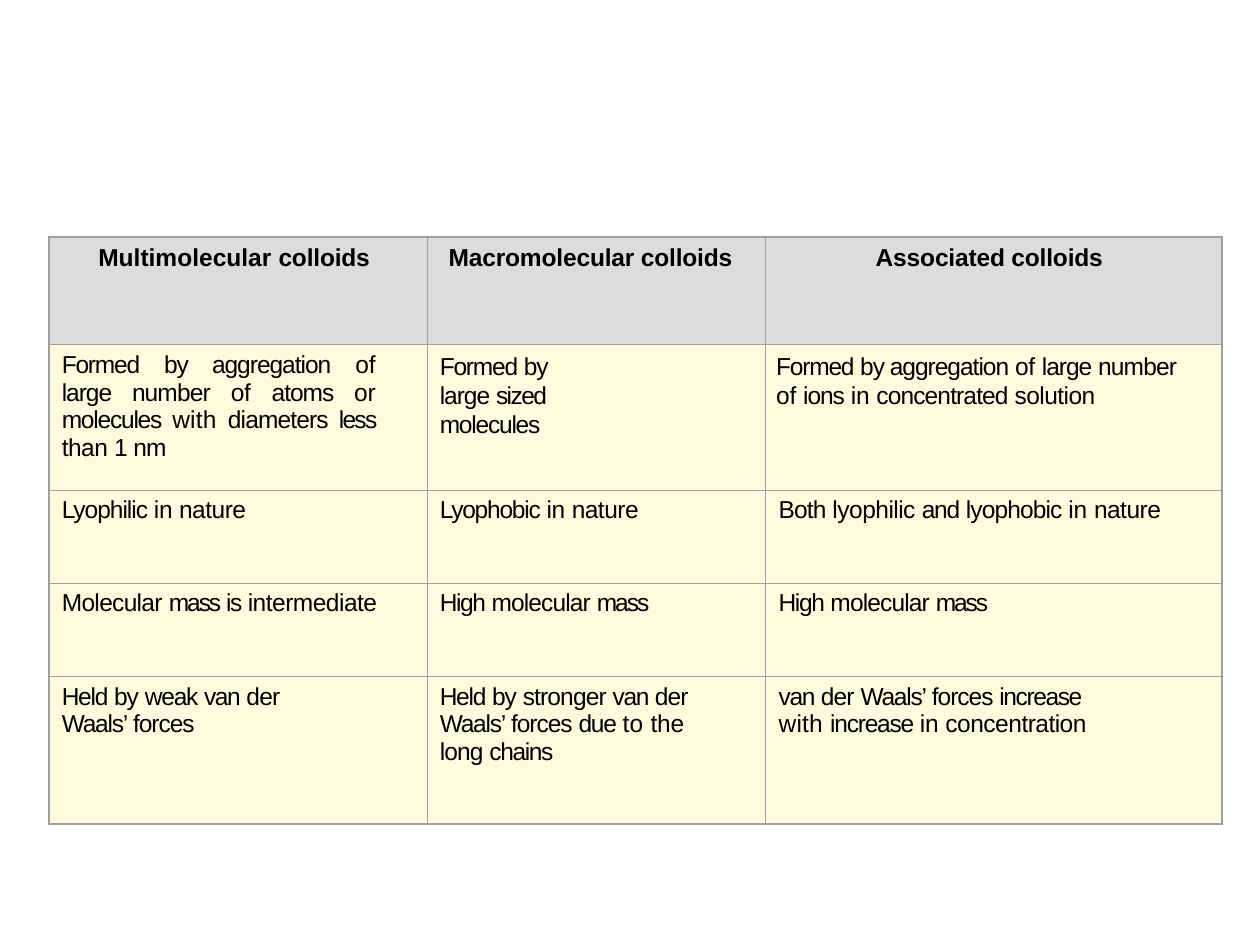
"""Build a slide with a table that compares three kinds of colloids."""
from typing import NamedTuple

from lxml import etree
from pptx import Presentation
from pptx.dml.color import RGBColor
from pptx.enum.text import MSO_ANCHOR, PP_ALIGN
from pptx.oxml.ns import qn
from pptx.util import Inches, Pt

LEFT, JUST = PP_ALIGN.LEFT, PP_ALIGN.JUSTIFY
TOP = MSO_ANCHOR.TOP
FONT, SIZE = "Arial", 14
INK, EDGE, HEAD, BODY = "000000", "9F9F9F", "DCDCDC", "FFFADE"
THIN, THICK = 0.25, 1
COLS = (3, 2.68, 3.63)


class Row(NamedTuple):
    high: float
    inset: float
    fill: str
    bold: bool


class Entry(NamedTuple):
    runs: tuple
    indent: float = 0.1
    right: float = 0
    before: float = 3.7
    line: float = 0
    align: PP_ALIGN = LEFT


ROWS = (
    Row(0.85, 0.06, HEAD, True),
    Row(1.16, 0.06, BODY, False),
    Row(0.74, 0.05, BODY, False),
    Row(0.74, 0.05, BODY, False),
    Row(1.17, 0.05, BODY, False),
)
HIGH = (("High ", -0.8), ("molecular ", -0.5), ("mass", -1.2))
GRID = (
    (
        Entry((("Multimolecular ", 0), ("colloids", -0.1)), 0.39, before=4.4),
        Entry((("Macromolecular colloids", -0.1),), 0.17, before=4.4),
        Entry((("Associated colloids", -0.1),), 0.88, before=4.4),
    ),
    (
        Entry((("Formed ", -0.7), ("by aggregation ", -0.6), ("of ", -0.1),
               ("large ", -0.6), ("number ", -0.5), ("of ", -0.1),
               ("atoms ", -0.6), ("or ", -0.1), ("molecules ", -0.7),
               ("with ", 0.1), ("diameters ", -0.5), ("less ", -1),
               ("than ", -0.3), ("1 ", -0.7), ("nm", -0.6)),
              right=0.41, before=4, align=JUST),
        Entry((("Formed ", -0.7), ("by large ", -0.6), ("sized ", -0.9),
               ("molecules", -0.7)), right=1.5, before=4.1, line=16.7),
        Entry((("Formed ", -0.7), ("by aggregation ", -0.6), ("of ", -0.1),
               ("large ", -0.6), ("number ", -0.5), ("of ", -0.1),
               ("ions ", -0.6), ("in ", -0.1), ("concentrated ", -0.5),
               ("solution", -0.3)), 0.09, 0.27, 4.6, 16.7),
    ),
    (
        Entry((("Lyophilic ", -0.6), ("in ", -0.2), ("nature", -0.3))),
        Entry((("Lyophobic ", -0.7), ("in ", -0.2), ("nature", -0.3))),
        Entry((("Both ", -0.5), ("lyophilic ", -0.3), ("and ", -0.7),
               ("lyophobic ", -0.5), ("in ", -0.1), ("nature", -0.3)), 0.11),
    ),
    (
        Entry((("Molecular ", -0.4), ("mass ", -1.2), ("is ", -0.8),
               ("intermediate", -0.3))),
        Entry(HIGH),
        Entry(HIGH, 0.11),
    ),
    (
        Entry((("Held ", -0.7), ("by ", -0.6), ("weak ", -0.7),
               ("van ", -0.8), ("der ", -0.4), ("Waals’ ", -0.7),
               ("forces", -0.6)), right=0.9),
        Entry((("Held ", -0.7), ("by ", -0.6), ("stronger ", -0.5),
               ("van ", -0.8), ("der ", -0.5), ("Waals’ ", -0.7),
               ("forces ", -0.6), ("due ", -0.7), ("to ", 0.1),
               ("the ", -0.1), ("long ", -0.5), ("chains", -0.8)),
              right=0.45),
        Entry((("van ", -0.8), ("der ", -0.5), ("Waals’ ", -0.7),
               ("forces ", -0.6), ("increase ", -0.8), ("with ", 0.1),
               ("increase ", -0.7), ("in ", -0.1), ("concentration", -0.3)),
              0.11, 0.92),
    ),
)


def color(code: str) -> RGBColor:
    return RGBColor.from_string(code)


def border(cell, side: str, width: float) -> None:
    props = cell._tc.get_or_add_tcPr()
    line = etree.SubElement(props, qn(f"a:ln{side}"), w=str(Pt(width)))
    fill = etree.SubElement(line, qn("a:solidFill"))
    etree.SubElement(fill, qn("a:srgbClr"), val=EDGE)


def write(cell, entry: Entry, bold: bool) -> None:
    para = cell.text_frame.paragraphs[0]
    para.alignment = entry.align
    para.space_before = Pt(entry.before)
    if entry.line:
        para.line_spacing = Pt(entry.line)
    props = para._p.get_or_add_pPr()
    props.set("marL", str(Inches(entry.indent)))
    props.set("marR", str(Inches(entry.right)))
    props.set("indent", "0")
    for text, space in entry.runs:
        run = para.add_run()
        run.text = text
        run.font.name, run.font.size, run.font.bold = FONT, Pt(SIZE), bold
        run.font.color.rgb = color(INK)
        run._r.get_or_add_rPr().set("spc", str(round(space * 100)))


def draw(cell, entry: Entry, row: Row, outer: dict) -> None:
    for side, edge in outer.items():
        border(cell, side, THICK if edge else THIN)
    cell.fill.solid()
    cell.fill.fore_color.rgb = color(row.fill)
    cell.margin_left = cell.margin_right = cell.margin_bottom = 0
    cell.margin_top = Inches(row.inset)
    cell.vertical_anchor = TOP
    write(cell, entry, row.bold)


def main() -> None:
    deck = Presentation()
    deck.slide_width, deck.slide_height = Inches(10), Inches(7.5)
    slide = deck.slides.add_slide(deck.slide_layouts[6])
    table = slide.shapes.add_table(
        len(ROWS), len(COLS), Inches(0.39), Inches(1.88),
        Inches(sum(COLS)), Inches(sum(row.high for row in ROWS))).table
    table.first_row = table.horz_banding = False
    for col, wide in zip(table.columns, COLS):
        col.width = Inches(wide)
    for r, (row, line) in enumerate(zip(ROWS, GRID)):
        table.rows[r].height = Inches(row.high)
        for c, entry in enumerate(line):
            outer = {"L": c == 0, "R": c == len(COLS) - 1,
                     "T": r == 0, "B": r == len(ROWS) - 1}
            draw(table.cell(r, c), entry, row, outer)
    deck.save("out.pptx")


if __name__ == "__main__":
    main()
